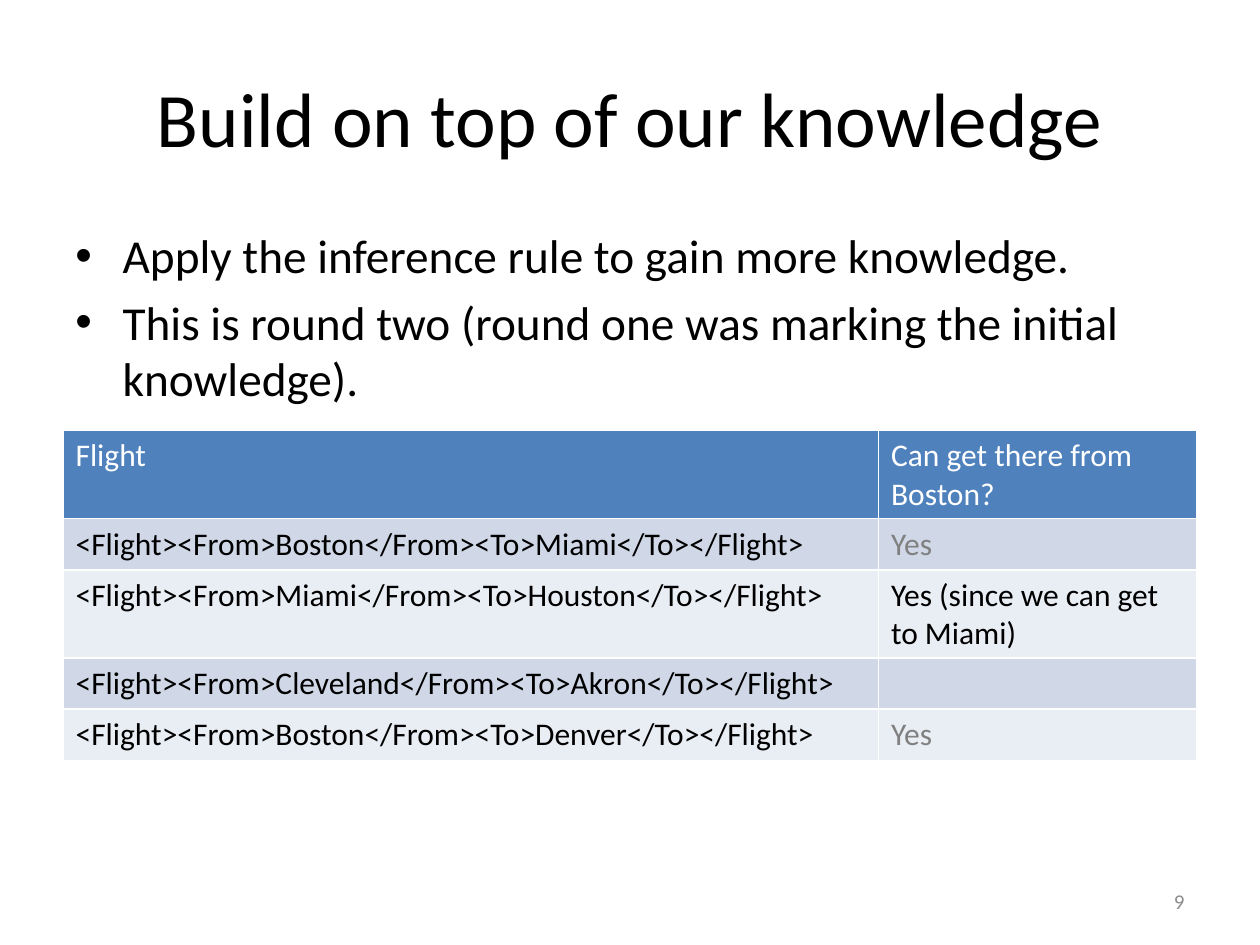
from typing import NamedTuple

from lxml.etree import SubElement
from pptx import Presentation
from pptx.dml.color import RGBColor
from pptx.enum.text import MSO_ANCHOR, PP_ALIGN
from pptx.oxml.ns import qn
from pptx.util import Pt

FONT = "Calibri"
BLACK = RGBColor(0x00, 0x00, 0x00)
WHITE = RGBColor(0xFF, 0xFF, 0xFF)
GRAY = RGBColor(0x80, 0x80, 0x80)
NUMBER_GRAY = RGBColor(0x8C, 0x8C, 0x8C)
HEADER_BLUE = RGBColor(0x4F, 0x81, 0xBD)
BANDS = (RGBColor(0xD0, 0xD8, 0xE8), RGBColor(0xE9, 0xED, 0xF4))

LEFT, WIDTH = 36, 648
ROW_HEIGHT = 29.2
COLUMN_WIDTHS = (466, 182)


class Flight(NamedTuple):
    origin: str
    destination: str
    answer: str = ""
    color: RGBColor = BLACK

    @property
    def markup(self) -> str:
        return f"<Flight><From>{self.origin}</From><To>{self.destination}</To></Flight>"


BULLETS = (
    "Apply the inference rule to gain more knowledge.",
    "This is round two (round one was marking the initial knowledge).",
)
FLIGHTS = (
    Flight("Boston", "Miami", "Yes", GRAY),
    Flight("Miami", "Houston", "Yes (since we can get to Miami)"),
    Flight("Cleveland", "Akron"),
    Flight("Boston", "Denver", "Yes", GRAY),
)


def format_runs(tf, size: float, color: RGBColor) -> None:
    for p in tf.paragraphs:
        for r in p.runs:
            r.font.name = FONT
            r.font.size = Pt(size)
            r.font.bold = False
            r.font.color.rgb = color


def add_text(s, left: float, top: float, width: float, height: float,
             text: str, size: float, color: RGBColor):
    tf = s.shapes.add_textbox(Pt(left), Pt(top), Pt(width), Pt(height)).text_frame
    tf.word_wrap = True
    tf.text = text
    format_runs(tf, size, color)
    return tf


def add_bullet(p, size: float) -> None:
    p.space_before = Pt(size * 0.2)
    pPr = p._p.get_or_add_pPr()
    pPr.set("marL", str(Pt(27)))
    pPr.set("indent", str(-Pt(27)))
    SubElement(pPr, qn("a:buFont"), typeface="Arial")
    SubElement(pPr, qn("a:buChar"), char="•")


def fill_cell(cell, text: str, color: RGBColor, fill: RGBColor) -> None:
    cell.fill.solid()
    cell.fill.fore_color.rgb = fill
    cell.text = text
    format_runs(cell.text_frame, 18, color)


def add_flight_table(s, flights: tuple[Flight, ...]) -> None:
    rows = len(flights) + 1
    table = s.shapes.add_table(rows, 2, Pt(LEFT), Pt(246), Pt(WIDTH),
                               Pt(rows * ROW_HEIGHT)).table
    for column, width in zip(table.columns, COLUMN_WIDTHS):
        column.width = Pt(width)
    for i, heading in enumerate(("Flight", "Can get there from Boston?")):
        fill_cell(table.cell(0, i), heading, WHITE, HEADER_BLUE)
    for i, flight in enumerate(flights):
        band = BANDS[i % 2]
        fill_cell(table.cell(i + 1, 0), flight.markup, BLACK, band)
        fill_cell(table.cell(i + 1, 1), flight.answer, flight.color, band)


def main() -> None:
    prs = Presentation()
    prs.slide_width, prs.slide_height = Pt(720), Pt(540)
    s = prs.slides.add_slide(prs.slide_layouts[5])

    # Title
    sp = s.shapes.title
    sp.left, sp.top, sp.width, sp.height = Pt(LEFT), Pt(21.6), Pt(WIDTH), Pt(90)
    tf = sp.text_frame
    tf.text = "Build on top of our knowledge"
    tf.vertical_anchor = MSO_ANCHOR.MIDDLE
    tf.paragraphs[0].alignment = PP_ALIGN.CENTER
    format_runs(tf, 44, BLACK)

    # Slide number
    tf = add_text(s, 516, 500.5, 168, 28.75, "9", 12, NUMBER_GRAY)
    tf.vertical_anchor = MSO_ANCHOR.MIDDLE
    tf.paragraphs[0].alignment = PP_ALIGN.RIGHT

    # Bullets
    tf = add_text(s, LEFT, 126, WIDTH, 96, "\n".join(BULLETS), 27, BLACK)
    for p in tf.paragraphs:
        add_bullet(p, 27)

    # Flights reachable from Boston
    add_flight_table(s, FLIGHTS)

    prs.save("out.pptx")


if __name__ == "__main__":
    main()
